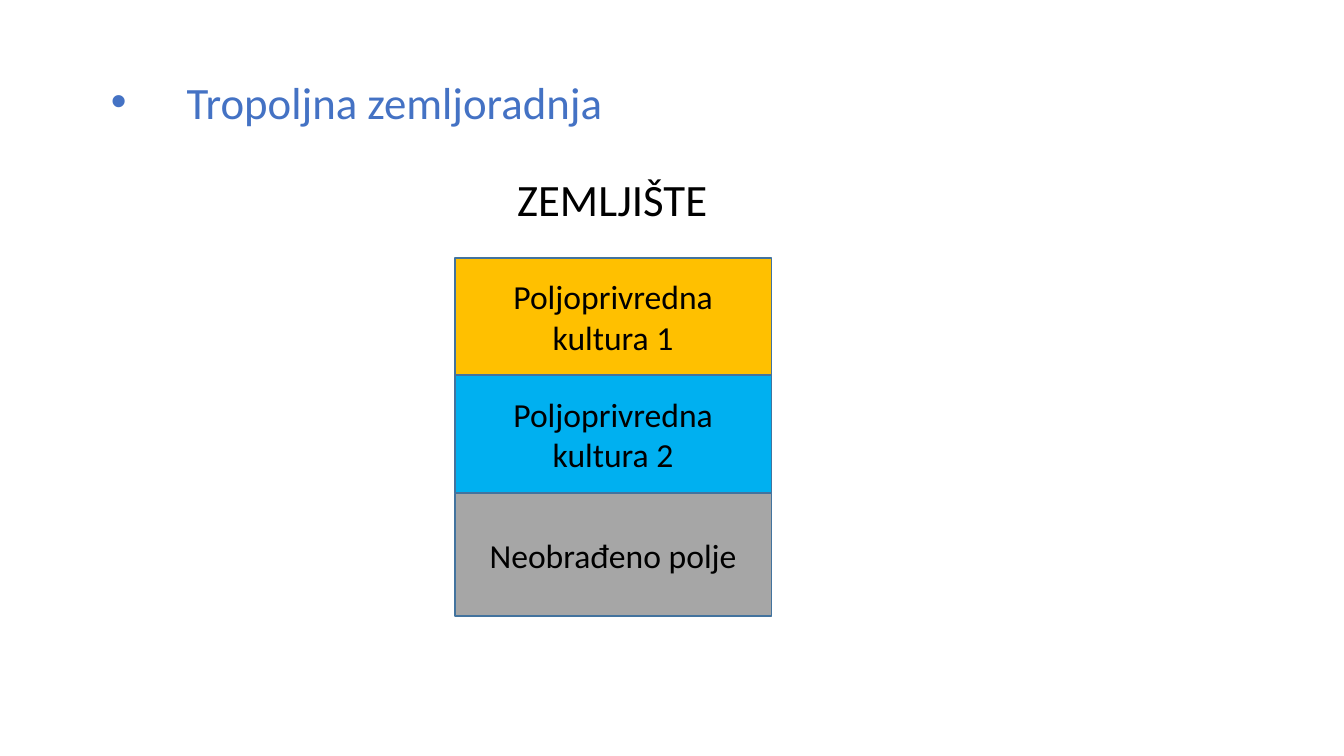
"""Build the slide on three-field farming."""
import pptx
import pptx.dml.color
import pptx.enum.shapes
import pptx.enum.text
import pptx.oxml
import pptx.oxml.ns
import pptx.util

Pt = pptx.util.Pt
RGBColor = pptx.dml.color.RGBColor
BLACK = RGBColor(0x00, 0x00, 0x00)
BLUE = RGBColor(0x44, 0x72, 0xC4)
OUTLINE = RGBColor(0x43, 0x73, 0x9E)
GOLD = RGBColor(0xFF, 0xC0, 0x00)
SKY = RGBColor(0x00, 0xB0, 0xF0)
GREY = RGBColor(0xA6, 0xA6, 0xA6)

HEADING = ("Tropoljna zemljoradnja", (28.8, 49.7, 452.2, 46.1), BLUE)
LAND_LABEL = ("ZEMLJIŠTE", (361.4, 118.8, 151.9, 46.1), BLACK)
FIELDS = [
    ("Poljoprivredna kultura 1", GOLD, 83.7),
    ("Poljoprivredna kultura 2", SKY, 84.3),
    ("Neobrađeno polje", GREY, 87.8),
]
FIELD_LEFT, FIELD_TOP, FIELD_WIDTH = 324.9, 184.3, 226.1
BULLET_INDENT = 54


def write_text(shape, text, size, color, wrap=True):
    """Put one centred line of formatted text into a shape."""
    frame = shape.text_frame
    frame.word_wrap = wrap
    paragraph = frame.paragraphs[0]
    paragraph.text = text
    paragraph.alignment = pptx.enum.text.PP_ALIGN.CENTER
    formats = {"name": "Calibri", "size": Pt(size)}
    for attribute, value in formats.items():
        setattr(paragraph.runs[0].font, attribute, value)
    paragraph.runs[0].font.color.rgb = color
    return paragraph


def add_label(slide, label, wrap):
    """Add a large text box and return its paragraph."""
    text, box, color = label
    shape = slide.shapes.add_textbox(*map(Pt, box))
    return write_text(shape, text, 32, color, wrap)


def add_bullet(paragraph):
    """Give a paragraph a round bullet with a hanging indent."""
    properties = paragraph._p.get_or_add_pPr()
    properties.set("marL", str(Pt(BULLET_INDENT)))
    properties.set("indent", str(-Pt(BULLET_INDENT)))
    namespace = pptx.oxml.ns.nsdecls("a")
    for markup in (f'<a:buFont {namespace} typeface="Arial"/>',
                   f'<a:buChar {namespace} char="•"/>'):
        properties.append(pptx.oxml.parse_xml(markup))


def add_fields(slide):
    """Stack the fields from top to bottom."""
    top = FIELD_TOP
    for text, color, height in FIELDS:
        field = slide.shapes.add_shape(
            pptx.enum.shapes.MSO_SHAPE.RECTANGLE,
            Pt(FIELD_LEFT), Pt(top), Pt(FIELD_WIDTH), Pt(height))
        field.shadow.inherit = False
        field.fill.solid()
        field.fill.fore_color.rgb = color
        field.line.color.rgb = OUTLINE
        field.line.width = Pt(1)
        field.text_frame.vertical_anchor = pptx.enum.text.MSO_ANCHOR.MIDDLE
        write_text(field, text, 24, BLACK)
        top += height


def main():
    """Create and save the presentation."""
    presentation = pptx.Presentation()
    presentation.slide_width, presentation.slide_height = Pt(960), Pt(540)
    slide = presentation.slides.add_slide(presentation.slide_layouts[6])
    add_bullet(add_label(slide, HEADING, True))
    add_label(slide, LAND_LABEL, False)
    add_fields(slide)
    presentation.save("out.pptx")


if __name__ == "__main__":
    main()
